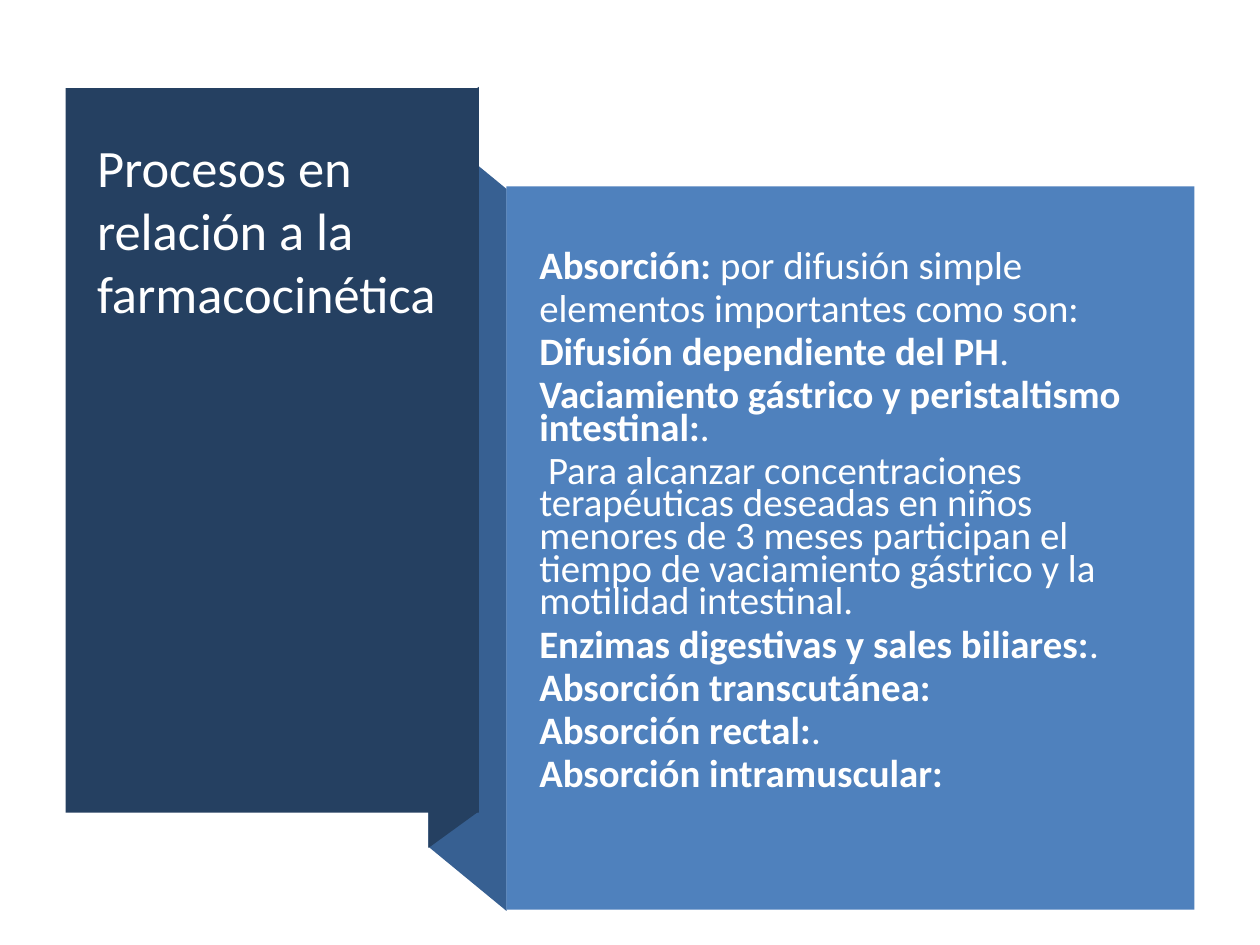
from pptx import Presentation
from pptx.dml.color import RGBColor
from pptx.enum.shapes import MSO_SHAPE as Shape
from pptx.enum.text import MSO_ANCHOR as Anchor, MSO_AUTO_SIZE as AutoSize, PP_ALIGN as Align
from pptx.util import Inches, Pt

# Content: each paragraph is a bold part and a regular part
HEADING = "Procesos en relación a la farmacocinética"
PROCESSES = [
    ("Absorción: ", "por difusión simple"),
    ("", "elementos importantes como son:"),
    ("Difusión dependiente del PH", "."),
    ("Vaciamiento gástrico y peristaltismo intestinal:", "."),
    ("", " Para alcanzar concentraciones terapéuticas deseadas en niños menores "
         "de 3 meses participan el tiempo de vaciamiento gástrico y la motilidad "
         "intestinal."),
    ("Enzimas digestivas y sales biliares:", "."),
    ("Absorción transcutánea:", ""),
    ("Absorción rectal:", "."),
    ("Absorción intramuscular:", ""),
]

THEME = {
    "font": "Calibri", "text": "FFFFFF", "heading_size": 30, "body_size": 22.2,
    "dark": "254061", "fold": "376092", "panel": "4F81BD",
}

# Ribbon geometry, in inches
FOLD_LEFT, DARK_RIGHT, PANEL_LEFT = 3.4, 3.8, 4.02
DARK_PANEL = (0.52, 0.7, DARK_RIGHT - 0.52, 5.75)
BODY_PANEL = (PANEL_LEFT, 1.48, 5.46, 5.74)
FOLDS = [
    ("fold", [(PANEL_LEFT, 7.23), (FOLD_LEFT, 6.72), (FOLD_LEFT, 0.99), (PANEL_LEFT, 1.5)]),
    ("dark", [(DARK_RIGHT, 6.44), (FOLD_LEFT, 6.73), (FOLD_LEFT, 0.98), (DARK_RIGHT, 0.69)]),
]
HEADING_BOX = (0.77, 1.07, 2.78, 4.99)
BODY_BOX = (4.28, 1.88, 4.88, 4.55)


def paint(part, colour):
    part.shadow.inherit = False
    part.fill.solid()
    part.fill.fore_color.rgb = RGBColor.from_string(THEME[colour])
    part.line.fill.background()


def add_panel(slide, box, colour):
    paint(slide.shapes.add_shape(Shape.RECTANGLE, *map(Inches, box)), colour)


def add_fold(slide, colour, corners):
    points = [(Inches(x), Inches(y)) for x, y in corners]
    outline = slide.shapes.build_freeform(*points[0])
    outline.add_line_segments(points[1:], close=True)
    paint(outline.convert_to_shape(), colour)


def set_frame(frame, anchor):
    layout = {
        "word_wrap": True, "auto_size": AutoSize.NONE, "vertical_anchor": anchor,
        "margin_left": 0, "margin_top": 0, "margin_right": 0, "margin_bottom": 0,
    }
    for name, value in layout.items():
        setattr(frame, name, value)


def add_run(paragraph, words, size, bold=False):
    run = paragraph.add_run()
    run.text = words
    for name, value in {"name": THEME["font"], "size": Pt(size), "bold": bold}.items():
        setattr(run.font, name, value)
    run.font.color.rgb = RGBColor.from_string(THEME["text"])


def add_heading(slide):
    heading = slide.shapes.title
    for name, value in zip(("left", "top", "width", "height"), HEADING_BOX):
        setattr(heading, name, Inches(value))
    set_frame(heading.text_frame, Anchor.TOP)
    paragraph = heading.text_frame.paragraphs[0]
    paragraph.alignment = Align.LEFT
    add_run(paragraph, HEADING, THEME["heading_size"])
    # Bring the heading in front of the panels
    heading.element.getparent().append(heading.element)


def add_processes(slide):
    frame = slide.shapes.add_textbox(*map(Inches, BODY_BOX)).text_frame
    set_frame(frame, Anchor.MIDDLE)
    spacing = {"alignment": Align.LEFT, "line_spacing": 0.7, "space_after": Pt(6)}
    for index, (strong, plain) in enumerate(PROCESSES):
        paragraph = frame.add_paragraph() if index else frame.paragraphs[0]
        for name, value in spacing.items():
            setattr(paragraph, name, value)
        for words, bold in ((strong, True), (plain, False)):
            if words:
                add_run(paragraph, words, THEME["body_size"], bold)


def main():
    deck = Presentation()
    deck.slide_width, deck.slide_height = Inches(10), Inches(7.5)
    slide = deck.slides.add_slide(deck.slide_layouts[5])

    # Folded ribbon, from back to front
    for colour, corners in FOLDS:
        add_fold(slide, colour, corners)
    add_panel(slide, DARK_PANEL, "dark")
    add_panel(slide, BODY_PANEL, "panel")

    # Text
    add_heading(slide)
    add_processes(slide)
    deck.save("out.pptx")


if __name__ == "__main__":
    main()
